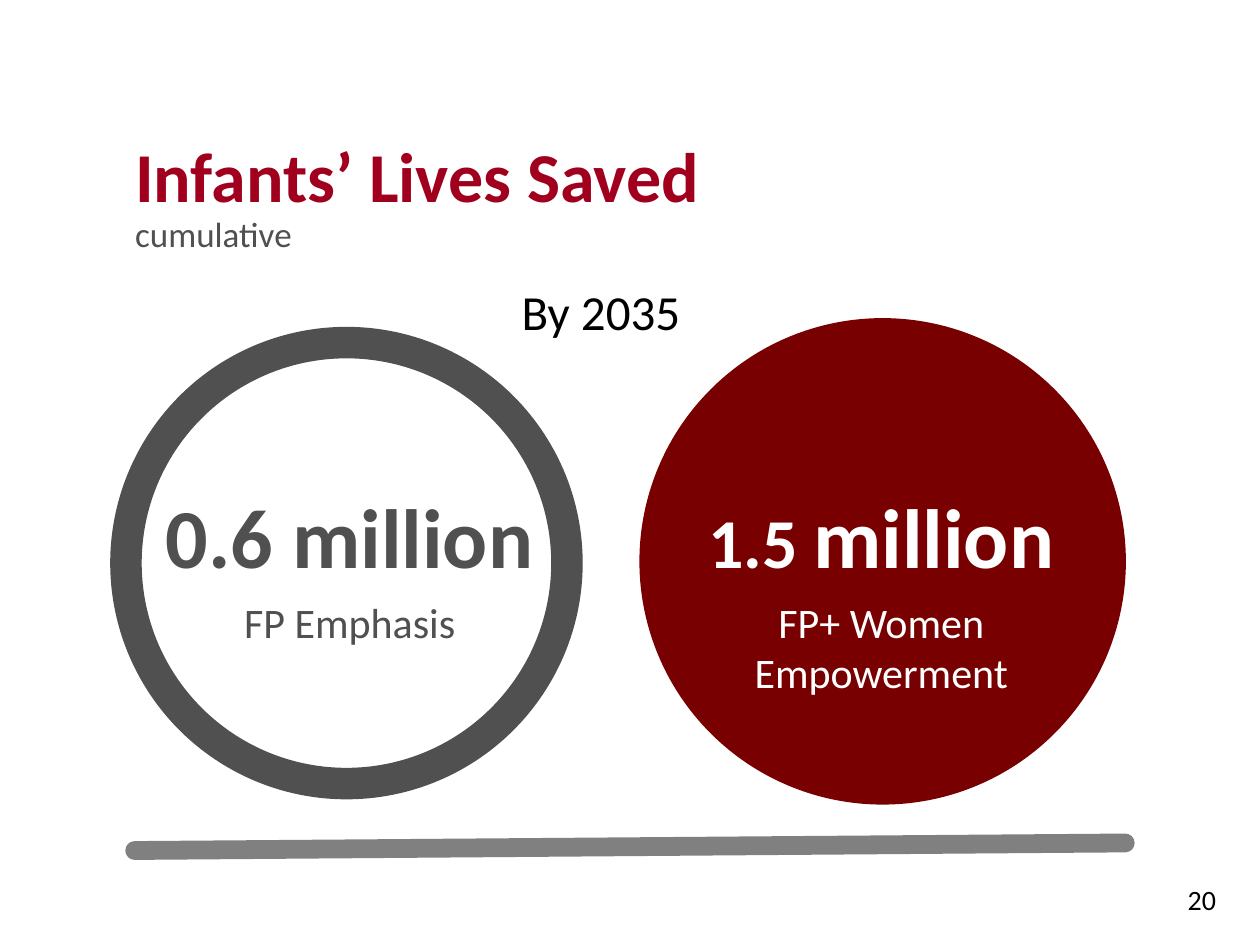
from pptx import Presentation
from pptx.util import Pt
from pptx.dml.color import RGBColor as RGB
from pptx.enum.shapes import MSO_SHAPE as Shape, MSO_CONNECTOR as Link
from pptx.enum.text import PP_ALIGN as Align, MSO_ANCHOR as Anchor, MSO_AUTO_SIZE as Fit
from pptx.oxml.ns import qn
from lxml import etree

HUES = {"red": "A0001E", "dark": "780000", "gray": "505050",
        "rule": "808080", "black": "000000", "white": "FFFFFF"}


def hue(name):
    return RGB.from_string(HUES[name])


def write(shape, paras, top=3.6):
    """Fill a frame; each paragraph is (format dict, list of runs)."""
    frame = shape.text_frame
    values = {"word_wrap": True, "auto_size": Fit.NONE, "vertical_anchor": Anchor.TOP,
              "margin_left": Pt(7.2), "margin_right": Pt(7.2),
              "margin_top": Pt(top), "margin_bottom": Pt(3.6)}
    for key, val in values.items():
        setattr(frame, key, val)
    for i, (form, runs) in enumerate(paras):
        para = frame.add_paragraph() if i else frame.paragraphs[0]
        for key, val in form.items():
            setattr(para, key, val)
        for text, size, tone, bold in runs:
            if text.startswith("\n"):
                para.add_line_break()
            run = para.add_run()
            run.text = text.strip("\n")
            for key, val in {"name": "Calibri", "size": Pt(size), "bold": bold}.items():
                setattr(run.font, key, val)
            run.font.color.rgb = hue(tone)


deck = Presentation()
deck.slide_width, deck.slide_height = Pt(720), Pt(540)
slide = deck.slides.add_slide(deck.slide_layouts[5])
shapes = slide.shapes

# Title with its small second line
title = shapes.title
for key, val in {"left": 70, "top": 70.5, "width": 580, "height": 60}.items():
    setattr(title, key, Pt(val))
write(title, [({"alignment": Align.LEFT, "line_spacing": 0.9},
               [("Infants’ Lives Saved ", 40, "red", True),
                ("\ncumulative", 20, "gray", False)])], top=10.4)

# Circles: one solid, one ring
for left, top, size, tone, solid in [(374.4, 190.8, 260, "dark", True),
                                     (72, 195.8, 252, "gray", False)]:
    disc = shapes.add_shape(Shape.OVAL, Pt(left), Pt(top), Pt(size), Pt(size))
    disc.shadow.inherit = False
    if solid:
        disc.fill.solid()
        disc.fill.fore_color.rgb = hue(tone)
    else:
        disc.fill.background()
    disc.line.color.rgb = hue(tone)
    disc.line.width = Pt(18)

# Base rule with round ends
rule = shapes.add_connector(Link.STRAIGHT, Pt(77), Pt(486), Pt(643), Pt(481.7))
rule.line.color.rgb = hue("rule")
rule.line.width = Pt(10.75)
rule.line._get_or_add_ln().set("cap", "rnd")
etree.SubElement(rule._element.spPr, qn("a:effectLst"))

# Captions, figures and page number
mid, right = {"alignment": Align.CENTER}, {"alignment": Align.RIGHT}
spaced = {**mid, "space_after": Pt(6)}
notes = [
    ((181.4, 157.3, 324, 41), [(mid, [("By 2035", 28, "black", False)])]),
    ((618.5, 500.5, 83.5, 19.5), [(right, [("20", 16, "black", False)])]),
    ((85, 273.5, 229.7, 101), [(spaced, [("0.6 million", 48, "gray", True)]),
                               (spaced, [("FP Emphasis", 24, "gray", False)])]),
    ((389.5, 273.5, 228.2, 130), [(spaced, [("1.5 ", 40, "white", True),
                                            ("million", 48, "white", True)]),
                                  (mid, [("FP+ Women Empowerment", 24, "white", False)])]),
]
for area, paras in notes:
    write(shapes.add_textbox(*map(Pt, area)), paras)

deck.save("out.pptx")
